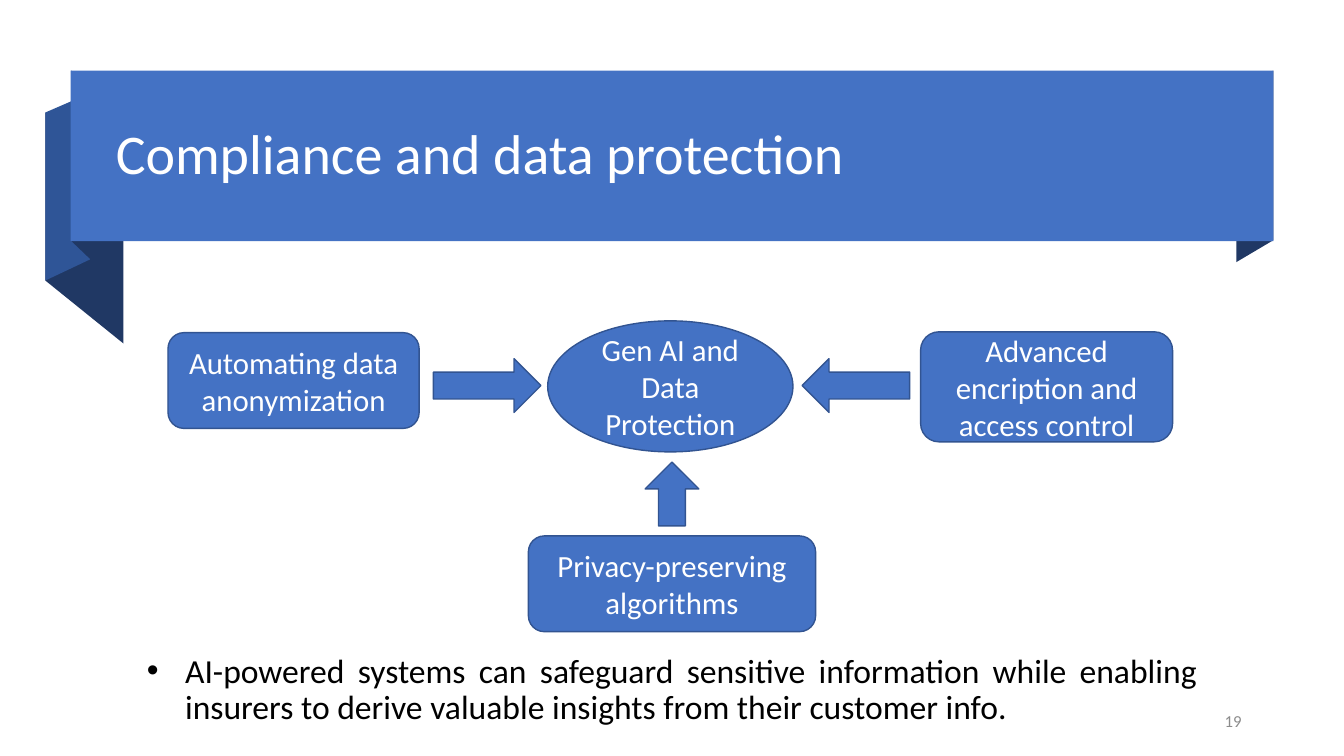
from pptx import Presentation
from pptx.dml.color import RGBColor
from pptx.enum.shapes import MSO_SHAPE
from pptx.enum.text import MSO_ANCHOR, PP_ALIGN
from pptx.oxml.ns import qn
from pptx.util import Inches, Pt
from lxml.etree import SubElement

# Grid of 160 columns by 90 rows
COLS, ROWS = 160, 90
UNIT = Inches(7.5) / ROWS
FONT = "Calibri"
COLORS = {"blue": "4472C4", "edge": "325491", "fold": "2F5597", "dark": "203864",
          "white": "FFFFFF", "black": "000000", "gray": "8C8C8C"}


def grid(*cells):
    return [round(c * UNIT) for c in cells]


def rgb(name):
    return RGBColor.from_string(COLORS[name])


def paint(sp, fill, edge=None):
    sp.shadow.inherit = False
    sp.fill.solid()
    sp.fill.fore_color.rgb = rgb(fill)
    if edge:
        sp.line.color.rgb = rgb(edge)
        sp.line.width = Pt(1)
    else:
        sp.line.fill.background()


def write(sp, text, size, color, align):
    tf = sp.text_frame
    tf.word_wrap = True
    tf.vertical_anchor = MSO_ANCHOR.MIDDLE
    p = tf.paragraphs[0]
    p.alignment = align
    r = p.add_run()
    r.text = text
    r.font.name, r.font.size = FONT, Pt(size)
    r.font.color.rgb = rgb(color)
    return p


def add_fold(s, points, fill):
    start, *rest = [grid(*pt) for pt in points]
    fb = s.shapes.build_freeform(*start, scale=1.0)
    fb.add_line_segments(rest, close=True)
    paint(fb.convert_to_shape(), fill)


def add_node(s, kind, box, text=None):
    sp = s.shapes.add_shape(kind, *grid(*box))
    paint(sp, "blue", "edge")
    if text:
        write(sp, text, 22, "white", PP_ALIGN.CENTER)


def add_text(s, box, text, size, color, align=PP_ALIGN.LEFT):
    return write(s.shapes.add_textbox(*grid(*box)), text, size, color, align)


def add_bullet(p, indent):
    pPr = p._p.get_or_add_pPr()
    pPr.set("marL", str(indent))
    pPr.set("indent", str(-indent))
    SubElement(pPr, qn("a:buFont")).set("typeface", "Arial")
    SubElement(pPr, qn("a:buChar")).set("char", "•")


def main():
    prs = Presentation()
    prs.slide_width, prs.slide_height = grid(COLS, ROWS)
    s = prs.slides.add_slide(prs.slide_layouts[6])

    # Ribbon folds, back to front
    folds = [
        ("dark", [(14.7, 40.9), (5.4, 33.4), (5.4, 13.4), (14.7, 21)]),
        ("fold", [(10.7, 30.9), (5.4, 33.4), (5.4, 13.4), (10.7, 11.1)]),
        ("dark", [(10.7, 30.8), (8.5, 28.7), (8.5, 8.4), (10.7, 10.7)]),
        ("dark", [(151.6, 28.6), (147.2, 31.2), (147.2, 10.9), (151.6, 8.4)]),
    ]
    for fill, points in folds:
        add_fold(s, points, fill)

    # Title banner
    banner = s.shapes.add_shape(MSO_SHAPE.RECTANGLE, *grid(8.4, 8.4, 143.2, 20.3))
    paint(banner, "blue")
    p = add_text(s, (12.6, 10.6, 134.8, 16), "Compliance and data protection", 40, "white")
    p.line_spacing = 0.9

    # Central topic, its three contributors and the arrows
    nodes = [
        (MSO_SHAPE.OVAL, (65.2, 38.2, 29.2, 15.6), "Gen AI and Data Protection"),
        (MSO_SHAPE.ROUNDED_RECTANGLE, (20, 39.6, 29.9, 11.4), "Automating data anonymization"),
        (MSO_SHAPE.ROUNDED_RECTANGLE, (109.6, 39.5, 30, 13.1),
         "Advanced encription and access control"),
        (MSO_SHAPE.ROUNDED_RECTANGLE, (62.9, 63.8, 34.2, 11.4), "Privacy-preserving algorithms"),
        (MSO_SHAPE.RIGHT_ARROW, (51.6, 42.7, 12.8, 6.4)),
        (MSO_SHAPE.UP_ARROW, (76.8, 55, 6.4, 7.6)),
        (MSO_SHAPE.LEFT_ARROW, (95.5, 42.7, 12.8, 6.4)),
    ]
    for node in nodes:
        add_node(s, *node)

    # Takeaway and page number
    p = add_text(s, (16.3, 76.8, 127.4, 10.8),
                 "AI-powered systems can safeguard sensitive information while enabling "
                 "insurers to derive valuable insights from their customer info.",
                 24, "black", PP_ALIGN.JUSTIFY)
    p.line_spacing = 0.9
    add_bullet(p, Inches(0.38))
    add_text(s, (113, 83.4, 36, 4.8), "19", 12, "gray", PP_ALIGN.RIGHT)

    prs.save("out.pptx")


if __name__ == "__main__":
    main()
